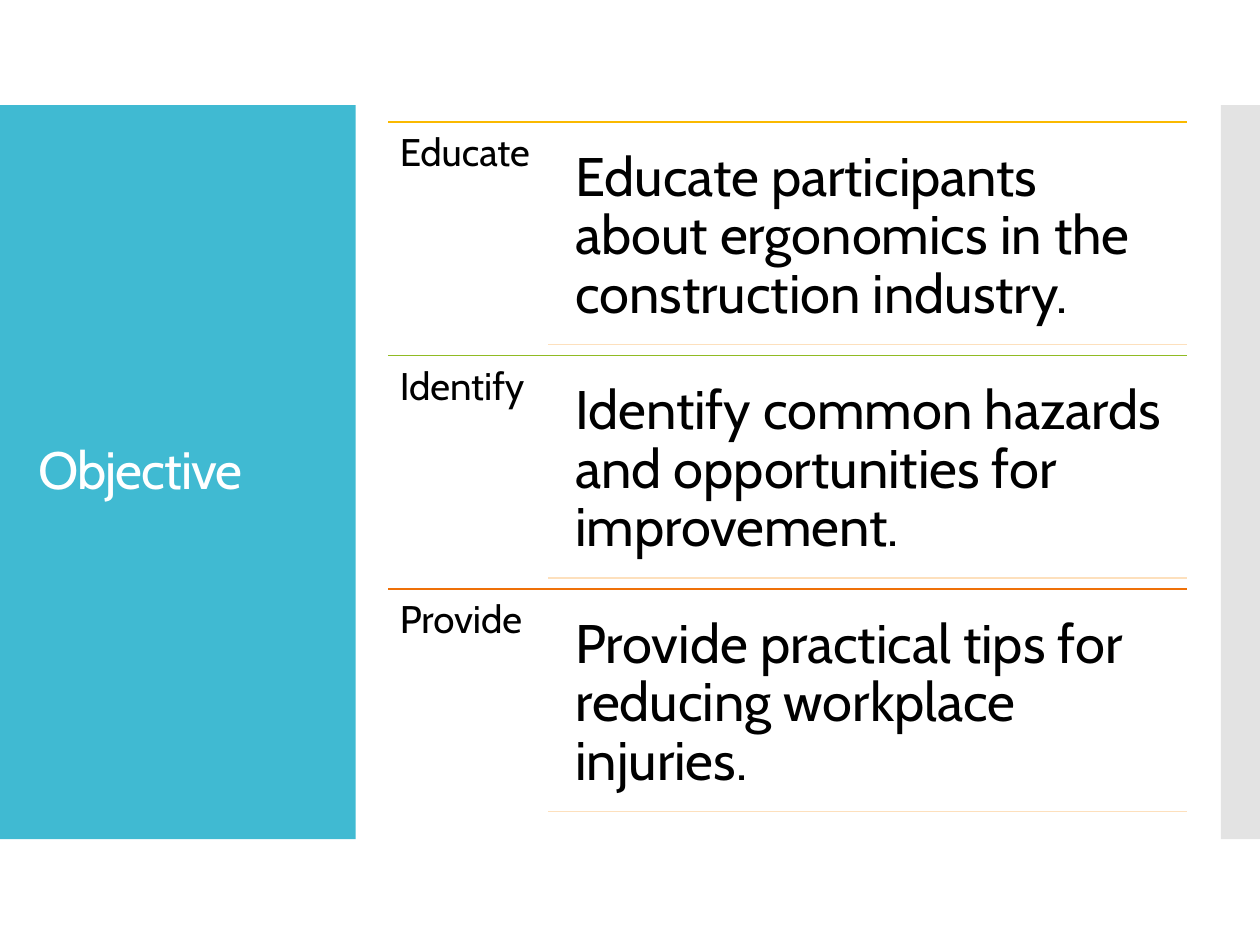
from dataclasses import dataclass

from lxml import etree
from pptx import Presentation
from pptx import util as u
from pptx.dml.color import RGBColor
from pptx.enum import shapes, text
from pptx.oxml import ns
from pptx.util import Cm


@dataclass(frozen=True)
class Theme:
    font: str = "Cabin"
    white: str = "FFFFFF"
    black: str = "000000"
    panel: str = "40BAD2"
    strip: str = "C8C8C8"
    divider: str = "FDE0BD"
    accents: tuple = ("FAB900", "90BB23", "EE7008")
    title_size: float = 30
    label_size: float = 22
    body_size: float = 31
    line_width: float = 0.85


THEME = Theme()
OBJECTIVES = (
    ("Educate", "Educate participants about ergonomics in the construction industry."),
    ("Identify", "Identify common hazards and opportunities for improvement."),
    ("Provide", "Provide practical tips for reducing workplace injuries."),
)


def add_panel(page, left, top, width, height, color, opacity=100):
    panel = page.shapes.add_shape(
        shapes.MSO_SHAPE.RECTANGLE, Cm(left), Cm(top), Cm(width), Cm(height))
    panel.shadow.inherit = False
    panel.line.fill.background()
    panel.fill.solid()
    panel.fill.fore_color.rgb = RGBColor.from_string(color)
    if opacity < 100:
        tint = panel.fill._xPr.find(".//" + ns.qn("a:srgbClr"))
        etree.SubElement(tint, ns.qn("a:alpha"), val=str(opacity * 1000))


def add_rule(page, left, right, top, color):
    rule = page.shapes.add_connector(
        shapes.MSO_CONNECTOR.STRAIGHT, Cm(left), Cm(top), Cm(right), Cm(top))
    rule.line.color.rgb = RGBColor.from_string(color)
    rule.line.width = u.Pt(THEME.line_width)
    etree.SubElement(rule._element.spPr, ns.qn("a:effectLst"))


def add_text(page, words, left, top, width, height, *, size, color=THEME.black,
             inset=0.25, inset_y=None, anchor=text.MSO_ANCHOR.TOP, tracking=None):
    """Add a wrapped text box; tracking is in points."""
    box = page.shapes.add_textbox(Cm(left), Cm(top), Cm(width), Cm(height))
    frame = box.text_frame
    frame.word_wrap = True
    frame.vertical_anchor = anchor
    frame.margin_left = frame.margin_right = Cm(inset)
    frame.margin_top = frame.margin_bottom = Cm(inset if inset_y is None else inset_y)
    para = frame.paragraphs[0]
    para.line_spacing = 0.9
    span = para.add_run()
    span.text = words
    span.font.name = THEME.font
    span.font.size = u.Pt(size)
    span.font.color.rgb = RGBColor.from_string(color)
    if tracking is not None:
        span._r.get_or_add_rPr().set("spc", str(round(tracking * 100)))


def add_title_panel(page, left, top, width, height):
    add_panel(page, left, top, width, height, THEME.panel)
    add_text(page, "Objective", left + 0.53, top + 1.02, width - 1.02, height - 2.04,
             size=THEME.title_size, color=THEME.white, inset_y=0.13,
             anchor=text.MSO_ANCHOR.MIDDLE, tracking=-0.6)


def add_objective(page, left, top, width, height, label, body, accent):
    """Add one row: accent rule, label, statement and closing divider."""
    label_width = width * 0.2
    gap = 0.22
    right = left + width
    body_left = left + label_width + gap
    add_rule(page, left, right, top, accent)
    add_text(page, label, left, top, label_width, height,
             size=THEME.label_size, inset=0.23)
    add_text(page, body, body_left, top + gap, right - body_left, height - 2 * gap,
             size=THEME.body_size, inset=0.33)
    add_rule(page, left + label_width, right, top + height - gap, THEME.divider)


def add_objectives(page, left, top, width, height):
    row_height = height / len(OBJECTIVES)
    for index, ((label, body), accent) in enumerate(zip(OBJECTIVES, THEME.accents)):
        add_objective(page, left, top + index * row_height, width, row_height,
                      label, body, accent)


def main():
    deck = Presentation()
    deck.slide_width, deck.slide_height = Cm(25.4), Cm(19.05)
    page = deck.slides.add_slide(deck.slide_layouts[6])
    band_top, band_height = 2.12, 14.8
    add_title_panel(page, 0, band_top, 7.17, band_height)
    add_panel(page, 24.61, band_top, 0.79, band_height, THEME.strip, opacity=50)
    add_objectives(page, 7.83, 2.46, 16.1, 14.12)
    deck.save("out.pptx")


if __name__ == "__main__":
    main()
